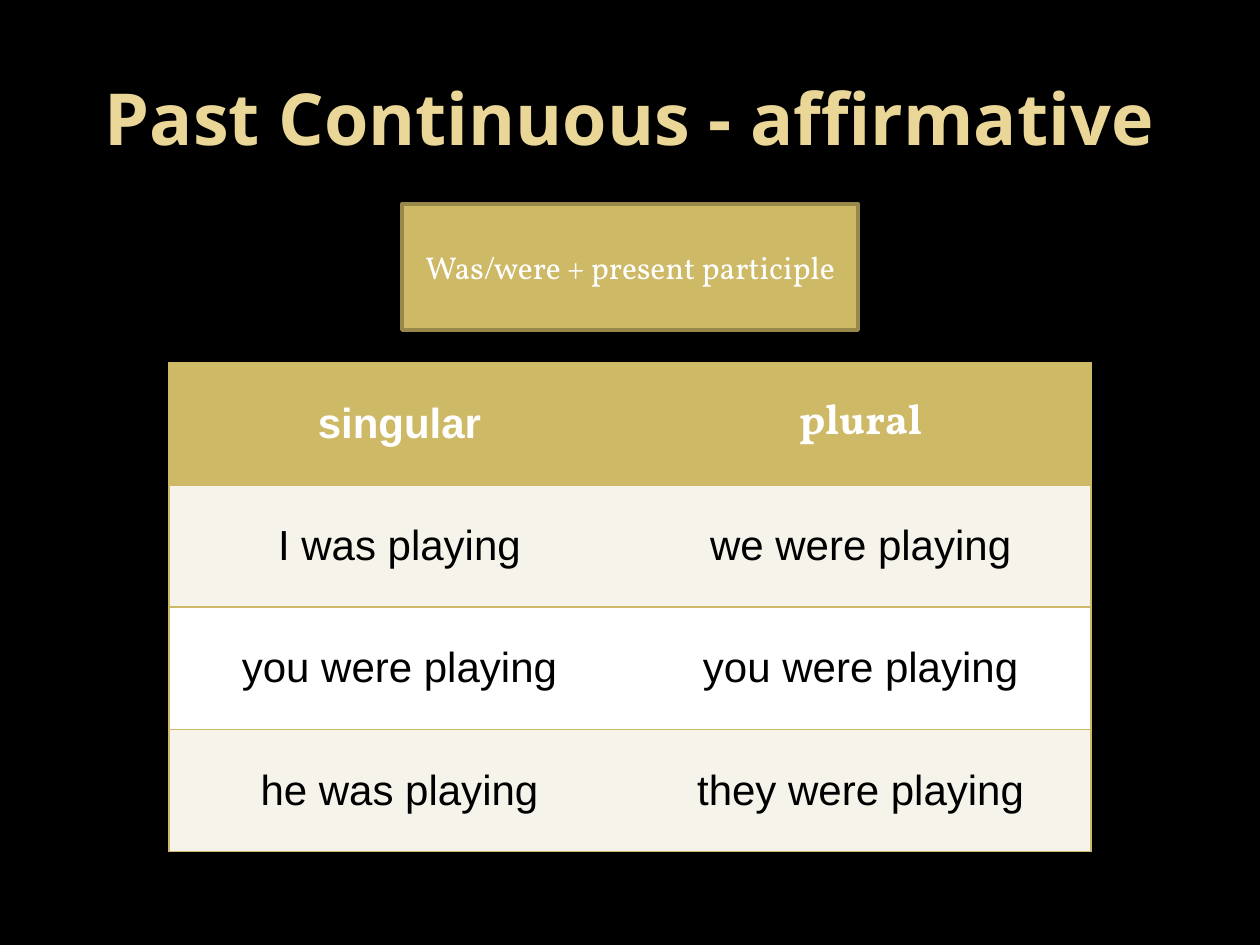
from dataclasses import dataclass

from lxml.etree import SubElement
from pptx import Presentation
from pptx.dml.color import RGBColor
from pptx.enum.shapes import MSO_SHAPE
from pptx.enum.text import MSO_ANCHOR, PP_ALIGN
from pptx.oxml.ns import qn
from pptx.util import Inches, Pt

TITLE = "Past Continuous - affirmative"
FORMULA = "Was/were + present participle"
CONJUGATION = [
    ("singular", "plural"),
    ("I was playing", "we were playing"),
    ("you were playing", "you were playing"),
    ("he was playing", "they were playing"),
]
HEADER_FONTS = ("Arial", "Vollkorn")


@dataclass(frozen=True)
class Theme:
    background: str = "000000"
    title: str = "EAD696"
    gold: str = "CEB966"
    dark_gold: str = "98894B"
    cream: str = "F6F3EA"
    white: str = "FFFFFF"
    black: str = "000000"
    title_size: int = 41
    table_size: int = 24
    formula_size: int = 18


THEME = Theme()
WIDTH, HEIGHT = 10, 7.5
TITLE_TOP, TITLE_WIDTH, TITLE_HEIGHT = 0.3, 9, 1.25
FORMULA_TOP, FORMULA_WIDTH, FORMULA_HEIGHT = 1.62, 3.62, 1
TABLE_TOP, COLUMN_WIDTH, ROW_HEIGHT = 2.88, 3.66, 0.97


def centred(top, width, height):
    """Return the place of a part centred across the slide."""
    return [Inches(n) for n in ((WIDTH - width) / 2, top, width, height)]


def paint(fill, color):
    fill.solid()
    fill.fore_color.rgb = RGBColor.from_string(color)


def write(frame, text, font, size, color, bold=False):
    frame.text = text
    frame.word_wrap = True
    para = frame.paragraphs[0]
    para.alignment = PP_ALIGN.CENTER
    span = para.runs[0].font
    span.name, span.size, span.bold = font, Pt(size), bold
    span.color.rgb = RGBColor.from_string(color)


def add_borders(cell, sides):
    """Draw gold lines on the named sides and none on the others."""
    properties = cell._tc.get_or_add_tcPr()
    for index, side in enumerate("LRTB"):
        line = properties.makeelement(qn(f"a:ln{side}"), {"w": str(Pt(1))})
        if side in sides:
            solid = SubElement(line, qn("a:solidFill"))
            SubElement(solid, qn("a:srgbClr"), val=THEME.gold)
        else:
            SubElement(line, qn("a:noFill"))
        properties.insert(index, line)


def add_title(page):
    box = page.shapes.add_textbox(*centred(TITLE_TOP, TITLE_WIDTH, TITLE_HEIGHT))
    box.text_frame.vertical_anchor = MSO_ANCHOR.MIDDLE
    write(box.text_frame, TITLE, "Open Sans", THEME.title_size, THEME.title, True)


def add_table(page):
    rows, columns = len(CONJUGATION), len(CONJUGATION[0])
    place = centred(TABLE_TOP, columns * COLUMN_WIDTH, rows * ROW_HEIGHT)
    table = page.shapes.add_table(rows, columns, *place).table
    for r, words in enumerate(CONJUGATION):
        header = r == 0
        fill = THEME.gold if header else (THEME.white, THEME.cream)[r % 2]
        color = THEME.white if header else THEME.black
        for c, word in enumerate(words):
            cell = table.cell(r, c)
            cell.vertical_anchor = MSO_ANCHOR.MIDDLE
            paint(cell.fill, fill)
            font = HEADER_FONTS[c] if header else "Arial"
            write(cell.text_frame, word, font, THEME.table_size, color, header)
            add_borders(cell, "TB" + "LR"[c])


def add_formula(page):
    box = page.shapes.add_shape(
        MSO_SHAPE.RECTANGLE, *centred(FORMULA_TOP, FORMULA_WIDTH, FORMULA_HEIGHT))
    box.shadow.inherit = False
    paint(box.fill, THEME.gold)
    paint(box.line.fill, THEME.dark_gold)
    box.line.width = Pt(2)
    box.text_frame.vertical_anchor = MSO_ANCHOR.MIDDLE
    write(box.text_frame, FORMULA, "Vollkorn", THEME.formula_size, THEME.white)


def main():
    deck = Presentation()
    deck.slide_width, deck.slide_height = Inches(WIDTH), Inches(HEIGHT)
    page = deck.slides.add_slide(deck.slide_layouts[6])
    paint(page.background.fill, THEME.background)
    add_title(page)
    add_table(page)
    add_formula(page)
    deck.save("out.pptx")


if __name__ == "__main__":
    main()
